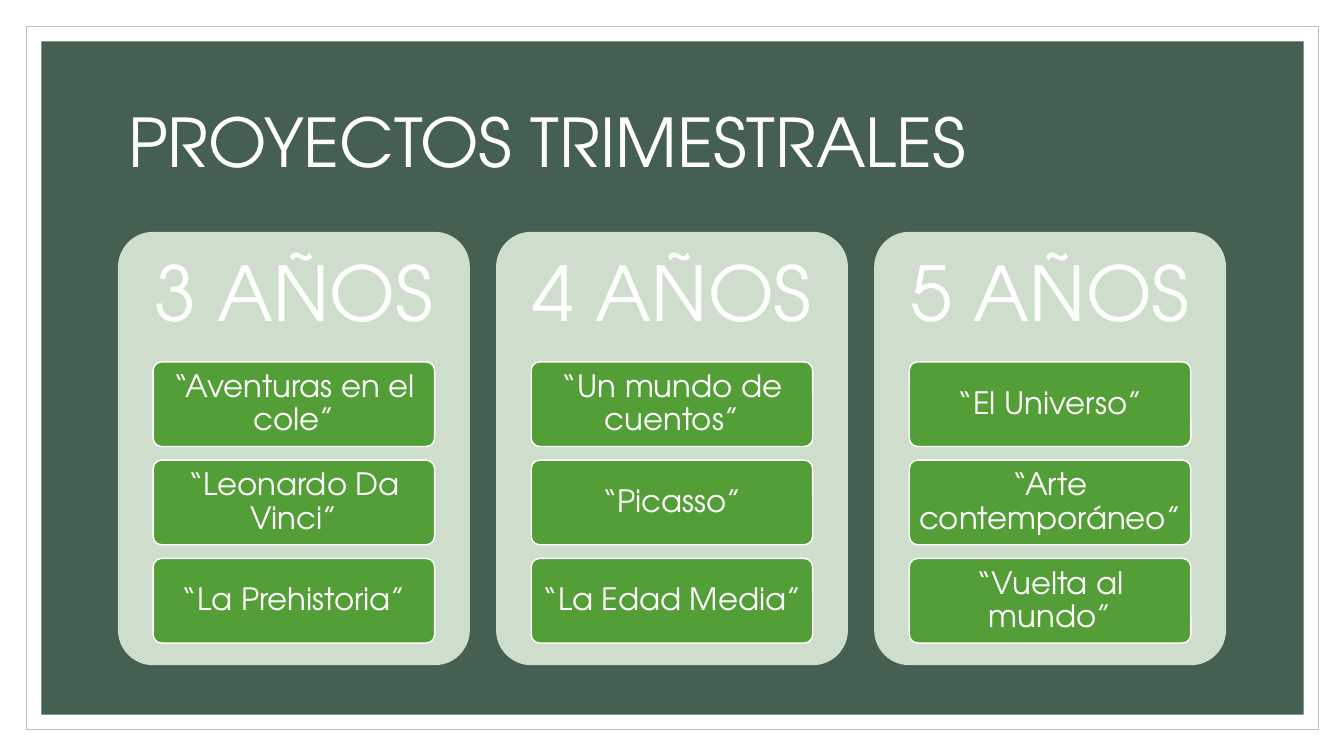
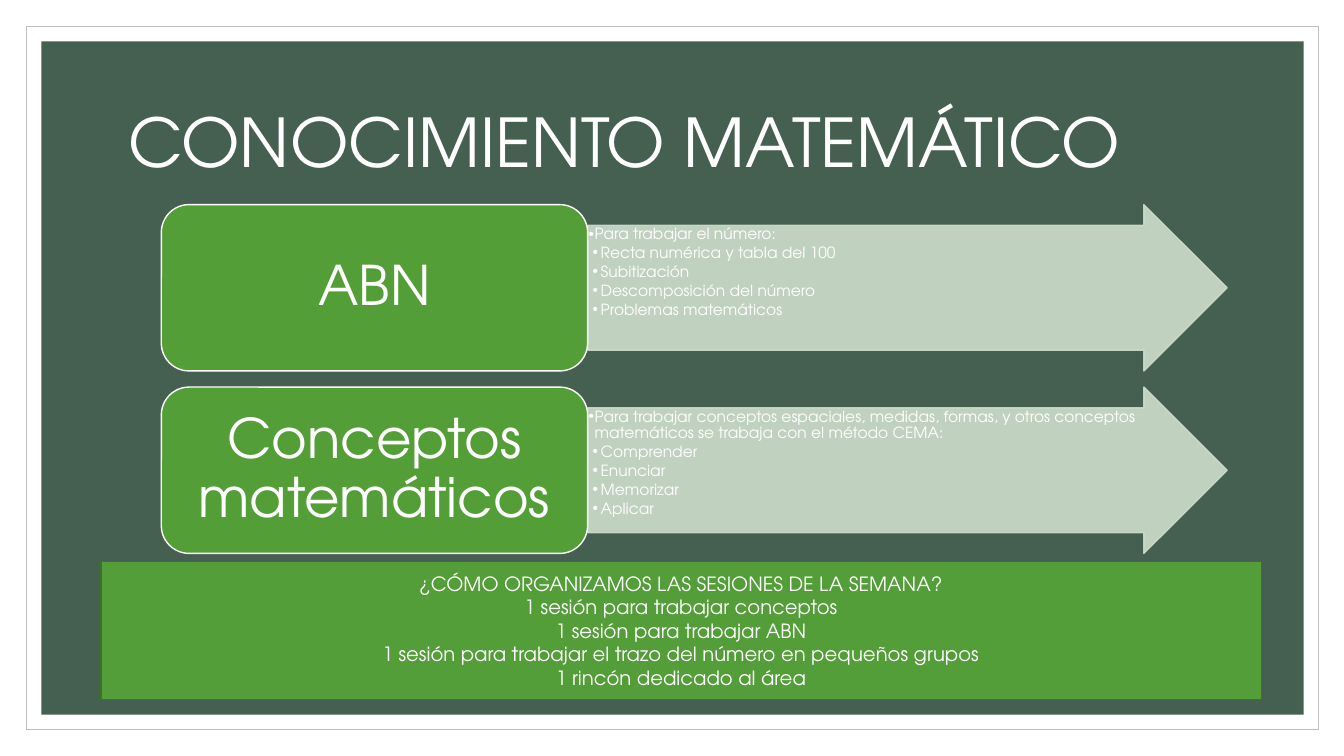
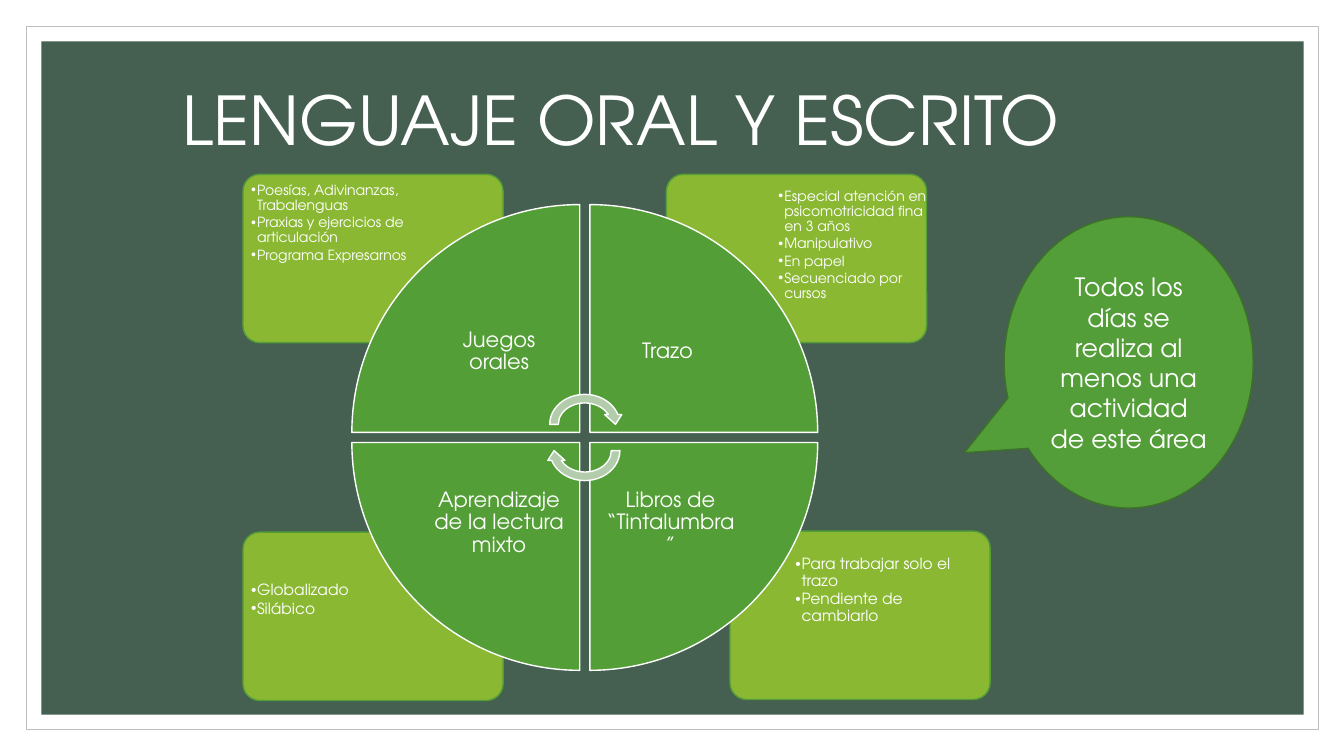
from pptx import Presentation
from pptx.dml.color import RGBColor
from pptx.enum.shapes import MSO_SHAPE as Preset
from pptx.enum.text import MSO_ANCHOR as Anchor, MSO_AUTO_SIZE as AutoSize, PP_ALIGN as Align
from pptx.oxml.ns import qn
from pptx.util import Inches, Pt
from lxml.etree import SubElement

FONT = "TeX Gyre Adventor"
WHITE = RGBColor(0xFF, 0xFF, 0xFF)
FRAME_GRAY = RGBColor(0xBF, 0xBF, 0xBF)
BACKDROP = RGBColor(0x45, 0x5F, 0x51)
PALE = RGBColor(0xCF, 0xDE, 0xCC)
GREEN = RGBColor(0x53, 0x9E, 0x36)
ACCENT = RGBColor(0x54, 0x9E, 0x39)
DARK_GREEN = RGBColor(0x3D, 0x73, 0x29)
LIME = RGBColor(0x8A, 0xB8, 0x33)
SAGE = RGBColor(0xB2, 0xCC, 0xAC)

TITLE_BOX = (1.17, 0.7, 11, 1.5)
TITLE_INSETS = (0.1, 0.05, 0.1, 0.05)


# Shared helpers
def set_all(target, values):
    for name, value in values.items():
        setattr(target, name, value)


def place(shape, box):
    set_all(shape, dict(zip(("left", "top", "width", "height"), map(Inches, box))))


def add_bullet(paragraph, level, hanging):
    properties = paragraph._p.get_or_add_pPr()
    properties.set("marL", str(Inches(0.06 * level)))
    properties.set("indent", str(-Inches(hanging)))
    color = SubElement(SubElement(properties, qn("a:buClr")), qn("a:srgbClr"))
    color.set("val", str(WHITE))
    SubElement(properties, qn("a:buFont")).set("typeface", "Arial")
    SubElement(properties, qn("a:buChar")).set("char", "•")


def write(shape, lines, size, insets, align=Align.CENTER, anchor=Anchor.MIDDLE,
          spacing=0.9, levels=None, gap=0, hanging=0.08):
    """Fill a shape with paragraphs; levels turns them into bullets."""
    frame = shape.text_frame
    set_all(frame, {"word_wrap": True, "auto_size": AutoSize.NONE, "vertical_anchor": anchor})
    sides = ("margin_left", "margin_top", "margin_right", "margin_bottom")
    set_all(frame, dict(zip(sides, map(Inches, insets))))
    for index, line in enumerate(lines):
        paragraph = frame.paragraphs[0] if index == 0 else frame.add_paragraph()
        set_all(paragraph, {"alignment": align, "line_spacing": spacing,
                            "space_before": Pt(gap if index else 0)})
        if levels:
            add_bullet(paragraph, levels[index], hanging)
        run = paragraph.add_run()
        run.text = line
        set_all(run.font, {"name": FONT, "size": Pt(size)})
        run.font.color.rgb = WHITE


def add_text(slide, box, lines, size, insets, **options):
    write(slide.shapes.add_textbox(*map(Inches, box)), lines, size, insets, **options)


def add_panel(slide, preset, box, fill, line=None, adjustments=(), rotation=0, width=1):
    shape = slide.shapes.add_shape(preset, *map(Inches, box))
    shape.shadow.inherit = False
    shape.rotation = rotation
    shape.fill.solid()
    shape.fill.fore_color.rgb = fill
    if line is None:
        shape.line.fill.background()
    else:
        shape.line.color.rgb = line
        shape.line.width = Pt(width)
    for index, value in enumerate(adjustments):
        shape.adjustments[index] = value
    return shape


def build_frame(slide, layout):
    """Draw the frame and move it behind everything on the layout."""
    outer = add_panel(slide, Preset.RECTANGLE, (0.26, 0.26, 12.82, 6.98), WHITE, FRAME_GRAY, width=0.75)
    inner = add_panel(slide, Preset.RECTANGLE, (0.41, 0.41, 12.52, 6.68), BACKDROP)
    for index, shape in enumerate((outer, inner), start=2):
        layout.shapes._spTree.insert(index, shape._element)


def add_title(slide, text, box=TITLE_BOX):
    place(slide.shapes.title, box)
    write(slide.shapes.title, [text], 48, TITLE_INSETS, align=Align.LEFT)


# Slide 1: one column per age
def add_age_column(slide, box, heading, projects):
    left, top, width, height = box
    add_panel(slide, Preset.ROUNDED_RECTANGLE, box, PALE, adjustments=[0.1])
    add_text(slide, (left, top, width, 0.3 * height), [heading], 54, (0.22,) * 4)
    for row, project in enumerate(projects):
        project_box = (left + 0.1 * width, top + 0.3 * height + row * 0.975, 0.8 * width, 0.84)
        card = add_panel(slide, Preset.ROUNDED_RECTANGLE, project_box, GREEN, WHITE, [0.1])
        write(card, [project], 22, (0.06, 0.05, 0.06, 0.05))


def build_projects(slide):
    add_title(slide, "PROYECTOS TRIMESTRALES")
    columns = {
        "3 AÑOS": ["“Aventuras en el cole”", "“Leonardo Da Vinci”", "“La Prehistoria”"],
        "4 AÑOS": ["“Un mundo de cuentos”", "“Picasso”", "“La Edad Media”"],
        "5 AÑOS": ["“El Universo”", "“Arte contemporáneo”", "“Vuelta al mundo”"],
    }
    for index, (heading, projects) in enumerate(columns.items()):
        add_age_column(slide, (1.17 + 3.75 * index, 2.3, 3.49, 4.3), heading, projects)


# Slide 2: topic with an arrow of details
def add_topic_row(slide, box, topic, details):
    left, top, width, height = box
    label_width = 0.4 * width
    arrow_box = (left + label_width, top, width - label_width, height)
    arrow = add_panel(slide, Preset.RIGHT_ARROW, arrow_box, PALE, PALE, [0.75, 0.5])
    for color in arrow._element.spPr.iter(qn("a:srgbClr")):
        SubElement(color, qn("a:alpha")).set("val", "90000")
    write(arrow, details, 11, (0.01,) * 4, align=Align.LEFT, anchor=Anchor.TOP,
          levels=[1] + [2] * (len(details) - 1), gap=1.6)
    label = add_panel(slide, Preset.ROUNDED_RECTANGLE, (left, top, label_width, height),
                      GREEN, WHITE, [0.167])
    write(label, [topic], 39, (0.16, 0.08, 0.16, 0.08))


def build_mathematics(slide):
    add_title(slide, "CONOCIMIENTO MATEMÁTICO")
    topics = {
        "ABN": ["Para trabajar el número:", "Recta numérica y tabla del 100", "Subitización",
                "Descomposición del número", "Problemas matemáticos"],
        "Conceptos matemáticos": [
            "Para trabajar conceptos espaciales, medidas, formas, y otros conceptos "
            "matemáticos se trabaja con el método CEMA:",
            "Comprender", "Enunciar", "Memorizar", "Aplicar"],
    }
    for index, (topic, details) in enumerate(topics.items()):
        add_topic_row(slide, (1.6, 2.03 + 1.81 * index, 10.57, 1.65), topic, details)
    sessions = add_panel(slide, Preset.RECTANGLE, (1, 5.57, 11.51, 1.37), ACCENT, DARK_GREEN)
    write(sessions, [
        "¿CÓMO ORGANIZAMOS LAS SESIONES DE LA SEMANA?",
        "1 sesión para trabajar conceptos",
        "1 sesión para trabajar ABN",
        "1 sesión para trabajar el trazo del número en pequeños grupos",
        "1 rincón dedicado al área",
    ], 14, TITLE_INSETS, spacing=1)


# Slide 3: wheel of four quarters with corner notes
def add_note(slide, corner, text_offset, lines, size, line=GREEN):
    left, top = corner
    add_panel(slide, Preset.ROUNDED_RECTANGLE, (left, top, 2.58, 1.67), LIME, line, [0.1])
    text_box = (left + text_offset[0], top + text_offset[1], 1.73, 1.18)
    add_text(slide, text_box, lines, size, (0.05,) * 4, align=Align.LEFT, anchor=Anchor.TOP,
             levels=[1] * len(lines), gap=1.4, hanging=0.08 if size > 10 else 0.07)


def add_wheel(slide, box, labels):
    """Labels run clockwise from the top left quarter."""
    left, top, size, _ = box
    gap, radius, label_size = 0.1, (size - 0.1) / 2, 1.6
    step = radius + gap
    for index, label in enumerate(labels):
        column, row = (0, 1, 1, 0)[index], index // 2
        x, y = left + column * step, top + row * step
        add_panel(slide, Preset.PIE_WEDGE, (x, y, radius, radius), GREEN, WHITE, rotation=90 * index)
        inset = radius - label_size
        label_box = (x + inset * (1 - column), y + inset * (1 - row), label_size, label_size)
        add_text(slide, label_box, [label], 15, (0.12,) * 4)
    # Turning arrows at the hub
    for index in range(2):
        arrow_box = (left + size / 2 - 0.39, top + size / 2 - 0.47 + 0.26 * index, 0.78, 0.68)
        add_panel(slide, Preset.CIRCULAR_ARROW, arrow_box, SAGE, WHITE, rotation=180 * index)


def build_language(slide):
    add_title(slide, "LENGUAJE ORAL Y ESCRITO", (1.71, 0.48, 11, 1.5))
    add_note(slide, (7.24, 5.27), (0.6, 0.2),
             ["Para trabajar solo el trazo", "Pendiente de cambiarlo"], 11)
    add_note(slide, (2.41, 5.28), (0.03, 0.45), ["Globalizado", "Silábico"], 11)
    add_note(slide, (6.61, 1.73), (1.06, 0.1),
             ["Especial atención en psicomotricidad fina en 3 años", "Manipulativo",
              "En papel", "Secuenciado por cursos"], 10, ACCENT)
    add_note(slide, (2.41, 1.73), (0.03, 0.04),
             ["Poesías, Adivinanzas, Trabalenguas", "Praxias y ejercicios de articulación",
              "Programa Expresarnos"], 10)
    add_wheel(slide, (3.49, 2.03, 4.62, 4.62),
              ["Juegos orales", "Trazo ", "Libros de “Tintalumbra”",
               "Aprendizaje de la lectura mixto"])
    callout = add_panel(slide, Preset.OVAL_CALLOUT, (9.96, 2.15, 2.47, 2.89),
                        ACCENT, DARK_GREEN, [-0.66, 0.31])
    write(callout, ["Todos los días se realiza al menos una actividad de este área"],
          18, TITLE_INSETS, spacing=1)


def main():
    presentation = Presentation()
    presentation.slide_width, presentation.slide_height = Inches(13.33), Inches(7.5)
    layout = presentation.slide_layouts.get_by_name("Title Only")
    for index, build in enumerate((build_projects, build_mathematics, build_language)):
        slide = presentation.slides.add_slide(layout)
        if index == 0:
            build_frame(slide, layout)
        build(slide)
    presentation.save("out.pptx")


if __name__ == "__main__":
    main()
